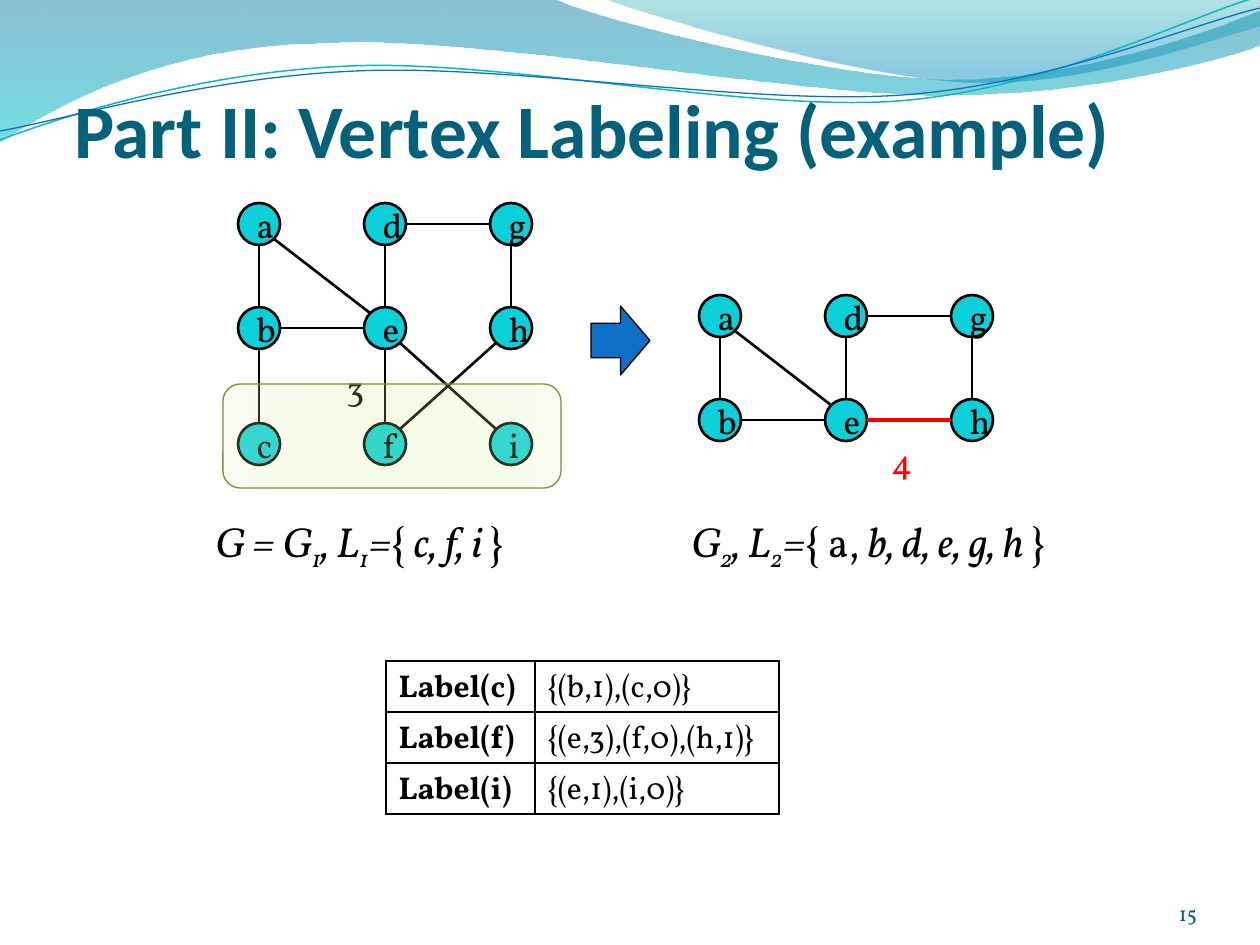
import math

import pptx
import pptx.dml.color
import pptx.enum.shapes
import pptx.enum.text
import pptx.oxml
import pptx.oxml.ns
import pptx.util

SCALE = 914400 / 126
NODE = 42
BODY_FONT = "Vollkorn"
DRAWING = pptx.oxml.ns.nsdecls("a")
SHAPES = pptx.enum.shapes.MSO_SHAPE
ALIGN = pptx.enum.text.PP_ALIGN
ANCHOR = pptx.enum.text.MSO_ANCHOR
GROW = pptx.enum.text.MSO_AUTO_SIZE.SHAPE_TO_FIT_TEXT

ITALIC = {"italic": True}
UPRIGHT = {"italic": False}
SUBSCRIPT = {"italic": True, "baseline": -25000}

SWOOSHES = [
    ((0, 0), [[(554, -1)], [(600, 21), (837, 79), (955, 79)],
              [(1075, 79), (1207, 33), (1260, 11)], [(1261, 45)],
              [(1239, 55), (1096, 96), (940, 95)], [(784, 95), (481, 35), (324, 43)],
              [(163, 45), (58, 105), (-1, 142)]],
     [(0, "0074A1", 45), (100, "00C6CF", 55)]),
    ((604, -1), [[(641, 14), (859, 78), (969, 82)], [(1079, 87), (1211, 40), (1260, 26)],
                 [(1260, 0)]],
     [(0, "00A1A9", 30), (80, "008BBF", 45)]),
]
WAVE_LINES = [
    ((0, 140), [[(60, 117), (199, 72), (349, 66)], [(498, 59), (747, 112), (898, 101)],
                [(1050, 89), (1182, 19), (1257, -3)]], "0AB8BF", 0.85),
    ((0, 131), [[(59, 121), (207, 77), (357, 71)], [(508, 64), (752, 106), (903, 95)],
                [(1053, 84), (1186, 26), (1260, 8)]], "0F6FC6", 0.75),
]
FULL_GRAPH = {"left": 238, "rows": [203, 307, 423], "columns": ["abc", "def", "ghi"],
              "edges": "ab bc de ef gd ei gh hf ea eb"}
REDUCED_GRAPH = {"left": 699, "rows": [295, 399], "columns": ["ab", "de", "gh"],
                 "edges": "ab de gd gh ea eb"}
LABELS = [("Label(c)", "{(b,1),(c,0)}"),
          ("Label(f)", "{(e,3),(f,0),(h,1)}"),
          ("Label(i)", "{(e,1),(i,0)}")]


def px(value):
    return pptx.util.Emu(round(value * SCALE))


def color(code):
    return pptx.dml.color.RGBColor.from_string(code)


def apply(target, values):
    for name, value in values.items():
        setattr(target, name, value)


def add_span(para, text, size, ink="000000", font=BODY_FONT, baseline=0, **style):
    span = para.add_run()
    span.text = text
    apply(span.font, {"name": font, "size": pptx.util.Pt(size), **style})
    span.font.color.rgb = color(ink)
    if baseline:
        span.font._element.set("baseline", str(baseline))


def set_line(line, code, width):
    line.color.rgb = color(code)
    line.width = pptx.util.Pt(width)


def set_gradient(shape, stops, angle):
    shape.fill.gradient()
    shape.fill.gradient_angle = angle
    stop_list = shape.element.spPr.find(".//" + pptx.oxml.ns.qn("a:gsLst"))
    for stop in list(stop_list):
        stop_list.remove(stop)
    for position, code, opacity in stops:
        stop_list.append(pptx.oxml.parse_xml(
            f'<a:gs {DRAWING} pos="{position * 1000}"><a:srgbClr val="{code}">'
            f'<a:alpha val="{opacity * 1000}"/></a:srgbClr></a:gs>'))


def bend_segments(shape, segments):
    straight = iter(shape.element.findall(".//" + pptx.oxml.ns.qn("a:lnTo")))
    for segment in segments:
        pieces = [next(straight) for _ in segment]
        if len(pieces) == 3:
            curve = pptx.oxml.parse_xml(f"<a:cubicBezTo {DRAWING}/>")
            pieces[0].addprevious(curve)
            for piece in pieces:
                curve.append(piece[0])
                piece.getparent().remove(piece)


def add_curve(page, start, segments, close):
    builder = page.shapes.build_freeform(*start, scale=SCALE)
    builder.add_line_segments([point for segment in segments for point in segment], close=close)
    shape = builder.convert_to_shape()
    shape.shadow.inherit = False
    bend_segments(shape, segments)
    return shape


def add_waves(page):
    for start, segments, stops in SWOOSHES:
        shape = add_curve(page, start, segments, True)
        set_gradient(shape, stops, 270)
        shape.line.fill.background()
    for start, segments, code, width in WAVE_LINES:
        shape = add_curve(page, start, segments, False)
        shape.fill.background()
        set_line(shape.line, code, width)


def add_title(page, text):
    title = page.shapes.title
    apply(title, {"left": px(74), "top": px(16), "width": px(1134), "height": px(158)})
    apply(title.text_frame, {"vertical_anchor": ANCHOR.BOTTOM, "margin_left": 0,
                             "margin_right": 0, "margin_top": px(6), "margin_bottom": 0})
    para = title.text_frame.paragraphs[0]
    para.alignment = ALIGN.LEFT
    add_span(para, text, 43.2, "04617B", "Calibri", bold=True)
    page.shapes._spTree.append(title.element)


def add_shape(page, kind, left, top, width, height, line_code, line_width, fill=None):
    shape = page.shapes.add_shape(kind, px(left), px(top), px(width), px(height))
    shape.shadow.inherit = False
    if fill:
        shape.fill.solid()
        shape.fill.fore_color.rgb = color(fill)
    set_line(shape.line, line_code, line_width)
    return shape


def add_text(page, left, top, width, height, spans, size, ink="000000", align=None, **frame):
    box = page.shapes.add_textbox(px(left), px(top), px(width), px(height))
    apply(box.text_frame, {"word_wrap": True, **frame})
    para = box.text_frame.paragraphs[0]
    para.alignment = align
    for text, style in spans:
        add_span(para, text, size, ink, **style)


def add_node(page, name, left, top):
    node = add_shape(page, SHAPES.OVAL, left, top, NODE, NODE, "000000", 1.5, "0BD0D9")
    node.text_frame.vertical_anchor = ANCHOR.MIDDLE
    para = node.text_frame.paragraphs[0]
    para.alignment = ALIGN.CENTER
    add_span(para, name, 20)
    return left + NODE / 2, top + NODE / 2


def add_edge(page, start, end, code="000000", width=1.5):
    dx, dy = ((b > a) - (b < a) for a, b in zip(start, end))
    reach = NODE / 2 / math.hypot(dx, dy)
    edge = page.shapes.add_connector(
        pptx.enum.shapes.MSO_CONNECTOR.STRAIGHT,
        px(start[0] + dx * reach), px(start[1] + dy * reach),
        px(end[0] - dx * reach), px(end[1] - dy * reach))
    set_line(edge.line, code, width)
    edge.element.spPr.append(pptx.oxml.parse_xml(f"<a:effectLst {DRAWING}/>"))


def add_graph(page, left, rows, columns, edges):
    centers = {}
    for index, names in enumerate(columns):
        for name, top in zip(names, rows):
            centers[name] = add_node(page, name, left + 126 * index, top)
    for start, end in edges.split():
        add_edge(page, centers[start], centers[end])
    return centers


def add_highlight(page):
    panel = add_shape(page, SHAPES.ROUNDED_RECTANGLE, 223, 384, 338, 104, "7B9135", 0.75)
    shades = [(0, "E2F5BA"), (30, "D7F399"), (45, "D3F28E"),
              (55, "D3F28E"), (73, "D7F399"), (100, "E2F5BA")]
    set_gradient(panel, [(position, code, 20) for position, code in shades], 0)


def set_borders(cell):
    properties = cell._tc.get_or_add_tcPr()
    for index, side in enumerate(("lnL", "lnR", "lnT", "lnB")):
        properties.insert(index, pptx.oxml.parse_xml(
            f'<a:{side} {DRAWING} w="12700"><a:solidFill><a:srgbClr val="000000"/>'
            f'</a:solidFill></a:{side}>'))


def add_label_table(page):
    table = page.shapes.add_table(len(LABELS), 2, px(386), px(661), px(393), px(153)).table
    apply(table, {"first_row": False, "horz_banding": False})
    for column, width in zip(table.columns, (149, 244)):
        column.width = px(width)
    for row, texts in enumerate(LABELS):
        for column, text in enumerate(texts):
            cell = table.cell(row, column)
            cell.fill.background()
            set_borders(cell)
            add_span(cell.text_frame.paragraphs[0], text, 18, bold=column == 0)


def main():
    deck = pptx.Presentation()
    apply(deck, {"slide_width": px(1260), "slide_height": px(945)})
    page = deck.slides.add_slide(deck.slide_layouts[5])
    add_waves(page)
    add_title(page, "Part II: Vertex Labeling (example)")

    add_graph(page, **FULL_GRAPH)
    add_text(page, 334, 360, 38, 55, [("3", {})], 20, auto_size=GROW)
    add_highlight(page)
    add_text(page, 203, 509, 357, 63,
             [("G = G", ITALIC), ("1", SUBSCRIPT), (", L", ITALIC), ("1", SUBSCRIPT),
              ("=", ITALIC), ("{ ", UPRIGHT), ("c, f, i ", ITALIC), ("}", UPRIGHT)],
             24, auto_size=GROW)

    arrow = add_shape(page, SHAPES.DOWN_ARROW, 586, 311, 69, 59, "000000", 0.75, "0F6FC6")
    arrow.rotation = 270

    centers = add_graph(page, **REDUCED_GRAPH)
    add_text(page, 679, 509, 427, 63,
             [("G", ITALIC), ("2", SUBSCRIPT), (", L", ITALIC), ("2", SUBSCRIPT),
              ("=", ITALIC), ("{ a, ", UPRIGHT), ("b, d, e, g, h ", ITALIC), ("}", UPRIGHT)],
             24, auto_size=GROW)
    add_text(page, 879, 433, 60, 55, [("4", {})], 20, "FF0000", auto_size=GROW)
    add_edge(page, centers["h"], centers["e"], "FF0000", 2.25)

    add_label_table(page)
    add_text(page, 1092, 876, 105, 50, [("15", {})], 12, "045D75", ALIGN.RIGHT,
             vertical_anchor=ANCHOR.BOTTOM, margin_left=0, margin_right=0,
             margin_top=0, margin_bottom=0)
    deck.save("out.pptx")


if __name__ == "__main__":
    main()
